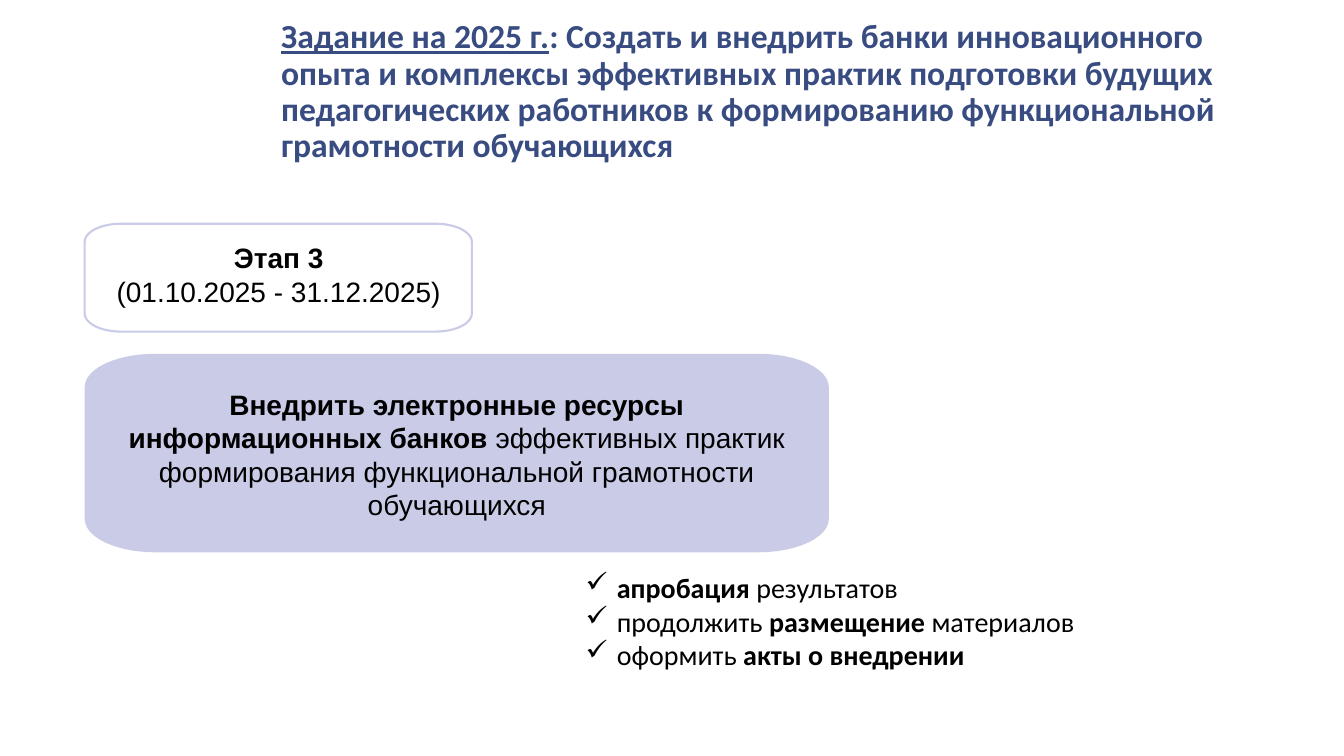
from math import cos, pi, sin

from lxml.etree import SubElement
from pptx import Presentation
from pptx.dml.color import RGBColor
from pptx.enum.text import MSO_ANCHOR, PP_ALIGN
from pptx.oxml.ns import qn
from pptx.util import Inches, Pt

COLORS = {"title": "384C81", "lilac": "C9CBE7", "text": "000000"}


def paint(name):
    """Return the named color."""
    return RGBColor.from_string(COLORS[name])


def write(slide, box, paras, font, size=20, color="text", align=PP_ALIGN.LEFT):
    """Write paragraphs of (text, bold) runs in a box and return its frame."""
    frame = slide.shapes.add_textbox(*map(Inches, box)).text_frame
    frame.word_wrap = True
    for i, runs in enumerate(paras):
        para = frame.paragraphs[0] if i == 0 else frame.add_paragraph()
        para.alignment = align
        para.font.name, para.font.size = font, Pt(size)
        para.font.color.rgb = paint(color)
        for text, bold in runs:
            run = para.add_run()
            run.text = text
            run.font.bold = bold
    return frame


def panel(slide, box, rx, ry, filled):
    """Draw a box with elliptical corners, either filled or outlined."""
    x, y, w, h = box
    corners = [(x + w - rx, y + h - ry), (x + rx, y + h - ry),
               (x + rx, y + ry), (x + w - rx, y + ry)]
    points = []
    for turn, (cx, cy) in enumerate(corners):
        for step in range(13):
            angle = (turn + step / 12) * pi / 2
            points.append((Inches(cx + rx * cos(angle)),
                           Inches(cy + ry * sin(angle))))
    pen = slide.shapes.build_freeform(*points[0])
    pen.add_line_segments(points[1:], close=True)
    shape = pen.convert_to_shape()
    shape.shadow.inherit = False
    if filled:
        shape.fill.solid()
        shape.fill.fore_color.rgb = paint("lilac")
        shape.line.fill.background()
    else:
        shape.fill.background()
        shape.line.color.rgb = paint("lilac")
        shape.line.width = Pt(1.5)


def title(slide, box):
    """Place the heading with its underlined lead."""
    runs = [("Задание на 2025 г.", True),
            (": Создать и внедрить банки инновационного опыта и комплексы "
             "эффективных практик подготовки будущих педагогических работников "
             "к формированию функциональной грамотности обучающихся", True)]
    frame = write(slide, box, [runs], "Calibri", 24, "title")
    frame.vertical_anchor = MSO_ANCHOR.MIDDLE
    para = frame.paragraphs[0]
    para.line_spacing = 0.9
    para.runs[0].font.underline = True


def stage(slide, box):
    """Place the outlined panel with the stage and its dates."""
    x, y, w, h = box
    panel(slide, box, 0.36, 0.18, False)
    write(slide, (x + 0.12, y + 0.12, w - 0.23, h - 0.3),
          [[("Этап 3", True)], [("(01.10.2025 - 31.12.2025)", False)]],
          "Arial", align=PP_ALIGN.CENTER)


def goal(slide, box):
    """Place the filled panel with the goal of the stage."""
    x, y, w, h = box
    panel(slide, box, 0.7, 0.33, True)
    runs = [("Внедрить электронные ресурсы информационных банков ", True),
            ("эффективных практик формирования функциональной грамотности "
             "обучающихся", False)]
    write(slide, (x + 0.2, y + 0.28, w - 0.4, h - 0.52), [runs],
          "Arial", align=PP_ALIGN.CENTER)


def tasks(slide, box):
    """Place the list of tasks with check marks."""
    paras = [[("апробация", True), (" результатов", False)],
             [("продолжить", False), (" размещение", True),
              (" материалов", False)],
             [("оформить ", False), ("акты о внедрении", True)]]
    frame = write(slide, box, paras, "Calibri")
    for para in frame.paragraphs:
        props = para._p.get_or_add_pPr()
        props.set("marL", str(Inches(0.31)))
        props.set("indent", str(-Inches(0.31)))
        mark = SubElement(props, qn("a:buChar"))
        mark.set("char", "✓")
        props.insert(0, mark)


def main():
    """Build the slide and save it."""
    deck = Presentation()
    deck.slide_width, deck.slide_height = Inches(13.33), Inches(7.5)
    slide = deck.slides.add_slide(deck.slide_layouts[6])
    title(slide, (2.69, -0.06, 10.22, 1.95))
    goal(slide, (0.84, 3.51, 7.38, 1.97))
    stage(slide, (0.84, 2.22, 3.84, 1.07))
    tasks(slide, (5.71, 5.61, 7.2, 1.11))
    deck.save("out.pptx")


if __name__ == "__main__":
    main()
